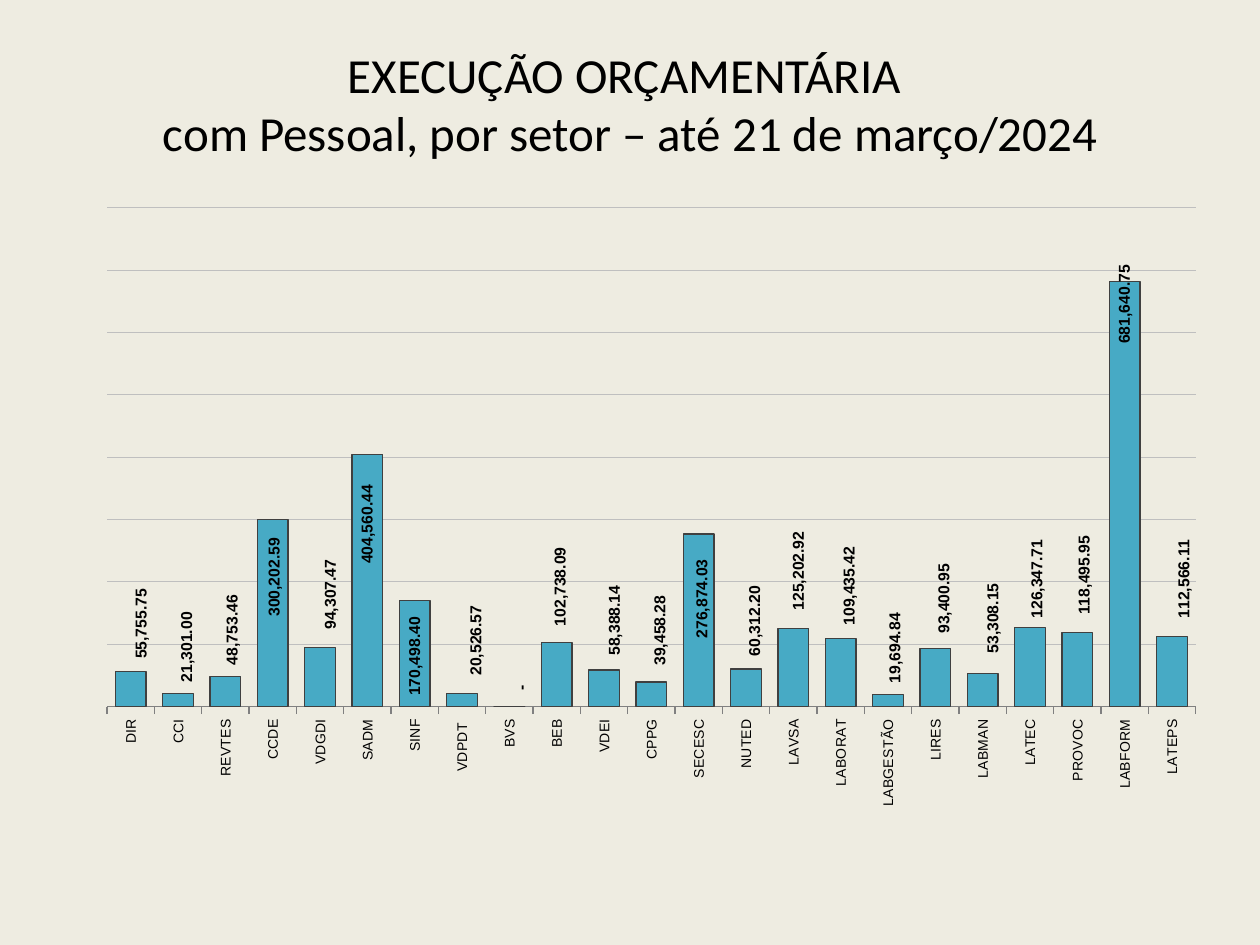
from copy import deepcopy

from lxml import etree
from pptx import Presentation
from pptx.chart.data import CategoryChartData
from pptx.dml.color import RGBColor
from pptx.enum.chart import XL_CHART_TYPE as ChartType
from pptx.enum.chart import XL_LABEL_POSITION as LabelPosition
from pptx.enum.chart import XL_TICK_LABEL_POSITION as TickLabelPosition
from pptx.enum.chart import XL_TICK_MARK as TickMark
from pptx.enum.text import MSO_ANCHOR as Anchor
from pptx.enum.text import PP_ALIGN as Align
from pptx.oxml import parse_xml
from pptx.oxml.ns import nsdecls, qn
from pptx.util import Pt

COLORS = {"background": "EEECE1", "text": "000000", "bar": "47AAC5",
          "outline": "404040", "grid": "BFBFBF", "axis": "808080"}
TITLE_LINES = ["EXECUÇÃO ORÇAMENTÁRIA ",
               "com Pessoal, por setor – até 21 de março/2024"]
NUMBER_FORMAT = '_(* #,##0.00_);_(* \\(#,##0.00\\);_(* "-"??_);_(@_)'

# sector, amount, label shift to the right and down in points
SECTORS = [
    ("DIR", 55755.75, 6, -2),
    ("CCI", 21301, 5, -1),
    ("REVTES", 48753.46, 4, -1),
    ("CCDE", 300202.59, 1, 61),
    ("VDGDI", 94307.47, 6, -5),
    ("SADM", 404560.44, 0, 68),
    ("SINF", 170498.4, 0, 60),
    ("VDPDT ", 20526.57, 8, -5),
    ("BVS", 0, 7, -4),
    ("BEB", 102738.09, 2, -4),
    ("VDEI", 58388.14, 6, -3),
    ("CPPG", 39458.28, 5, -4),
    ("SECESC", 276874.03, 2, 65),
    ("NUTED", 60312.2, 5, -2),
    ("LAVSA", 125202.92, 3, -5),
    ("LABORAT", 109435.42, 5, -2),
    ("LABGESTÃO", 19694.84, 4, -1),
    ("LIRES", 93400.95, 5, -3),
    ("LABMAN", 53308.15, 6, -6),
    ("LATEC", 126347.71, 4, 0),
    ("PROVOC", 118495.95, 4, -5),
    ("LABFORM", 681640.75, 0, 41),
    ("LATEPS", 112566.11, 7, -5),
]
TITLE_BOX = (36, 21.6, 648, 90)
CHART_BOX = (48.24, 111.6, 648, 356.4)
CHART_WIDTH, CHART_HEIGHT = CHART_BOX[2:]
PLOT_LAYOUT = {"x": 0.02, "y": 0.02, "w": 0.96, "h": 0.8}


def rgb(name):
    return RGBColor.from_string(COLORS[name])


def style_font(font, size, name, bold=False):
    font.size, font.name, font.bold = Pt(size), name, bold
    font.color.rgb = rgb("text")


def style_line(line, color, width):
    line.color.rgb = rgb(color)
    line.width = Pt(width)


def turn_upward(element):
    """Make the text of a chart part read from bottom to top."""
    body = element.find(qn("c:txPr")).find(qn("a:bodyPr"))
    body.set("rot", "-5400000")
    body.set("vert", "horz")


def layout_xml(places, inner=False):
    parts = '<c:layoutTarget val="inner"/>' if inner else ""
    if inner:
        parts += '<c:xMode val="edge"/><c:yMode val="edge"/>'
    parts += "".join(f'<c:{key} val="{value}"/>' for key, value in places.items())
    return parse_xml(f'<c:layout {nsdecls("c")}><c:manualLayout>{parts}'
                     "</c:manualLayout></c:layout>")


def hide_leader_lines(group):
    leader_lines = group.find(qn("c:showLeaderLines"))
    if leader_lines is None:
        leader_lines = etree.SubElement(group, qn("c:showLeaderLines"))
    leader_lines.set("val", "0")


def shift_labels(group):
    """Give each point a label moved from its usual place above the bar."""
    shared = [child for child in group if child.tag != qn("c:showLeaderLines")]
    for index, (_, _, right, down) in enumerate(SECTORS):
        label = etree.Element(qn("c:dLbl"))
        etree.SubElement(label, qn("c:idx")).set("val", str(index))
        label.append(layout_xml({"x": round(right / CHART_WIDTH, 4),
                                 "y": round(down / CHART_HEIGHT, 4)}))
        label.extend(deepcopy(child) for child in shared)
        group.insert(index, label)


def add_title(slide):
    title = slide.shapes.title
    title.left, title.top, title.width, title.height = map(Pt, TITLE_BOX)
    title.text_frame.vertical_anchor = Anchor.TOP
    title.text_frame.word_wrap = True
    para = title.text_frame.paragraphs[0]
    para.alignment = Align.CENTER
    for index, line in enumerate(TITLE_LINES):
        if index:
            para.add_line_break()
        span = para.add_run()
        span.text = line
        style_font(span.font, 28, "Calibri")


def add_sector_chart(slide):
    data = CategoryChartData()
    data.categories = [sector[0] for sector in SECTORS]
    data.add_series("Series 1", [sector[1] for sector in SECTORS])
    chart = slide.shapes.add_chart(
        ChartType.COLUMN_CLUSTERED, *map(Pt, CHART_BOX), data).chart
    chart.has_legend = False
    chart.has_title = False
    style_font(chart.font, 10, "Calibri")

    plot_area = chart._chartSpace.chart.plotArea
    for old_layout in plot_area.findall(qn("c:layout")):
        plot_area.remove(old_layout)
    plot_area.insert(0, layout_xml(PLOT_LAYOUT, inner=True))

    amounts = chart.value_axis
    amounts.minimum_scale, amounts.maximum_scale = 0, 800000
    amounts.major_unit = 100000
    amounts.tick_labels.number_format = NUMBER_FORMAT
    amounts.tick_labels.number_format_is_linked = False
    style_line(amounts.major_gridlines.format.line, "grid", 0.5)
    amounts.visible = False

    names = chart.category_axis
    names.major_tick_mark = TickMark.OUTSIDE
    names.tick_label_position = TickLabelPosition.LOW
    style_line(names.format.line, "axis", 0.75)
    style_font(names.tick_labels.font, 8, "Arial")
    turn_upward(names._element)

    plot = chart.plots[0]
    plot.gap_width = 54
    plot.vary_by_categories = False
    series = plot.series[0]
    series.format.fill.solid()
    series.format.fill.fore_color.rgb = rgb("bar")
    style_line(series.format.line, "outline", 0.75)

    labels = series.data_labels
    labels.show_value = True
    labels.number_format = NUMBER_FORMAT
    labels.number_format_is_linked = False
    labels.position = LabelPosition.OUTSIDE_END
    style_font(labels.font, 9, "Arial", bold=True)
    turn_upward(labels._element)
    hide_leader_lines(labels._element)
    shift_labels(labels._element)


def main():
    deck = Presentation()
    deck.slide_width, deck.slide_height = Pt(720), Pt(540)
    slide = deck.slides.add_slide(deck.slide_layouts[5])
    slide.background.fill.solid()
    slide.background.fill.fore_color.rgb = rgb("background")
    add_title(slide)
    add_sector_chart(slide)
    deck.save("out.pptx")


if __name__ == "__main__":
    main()
